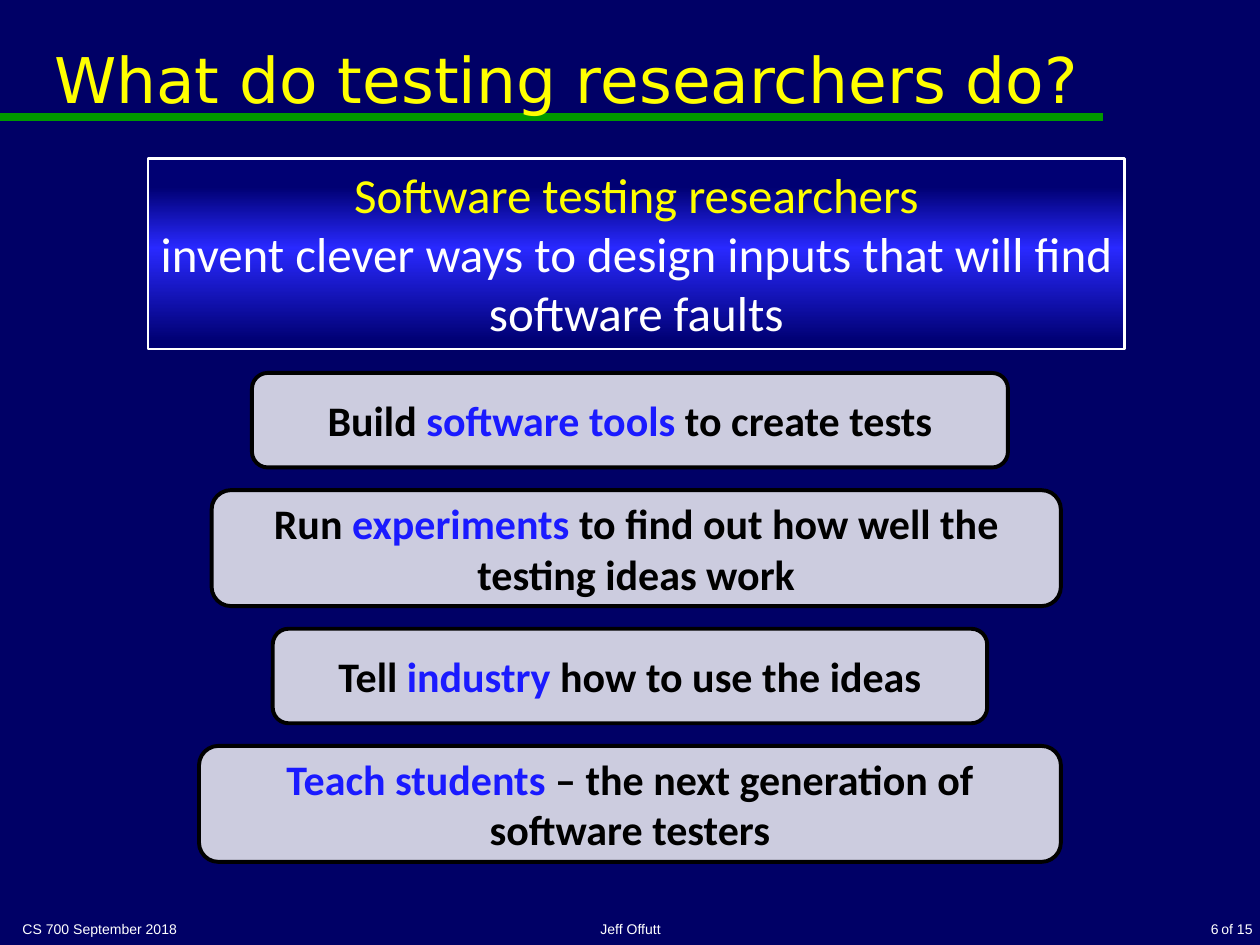
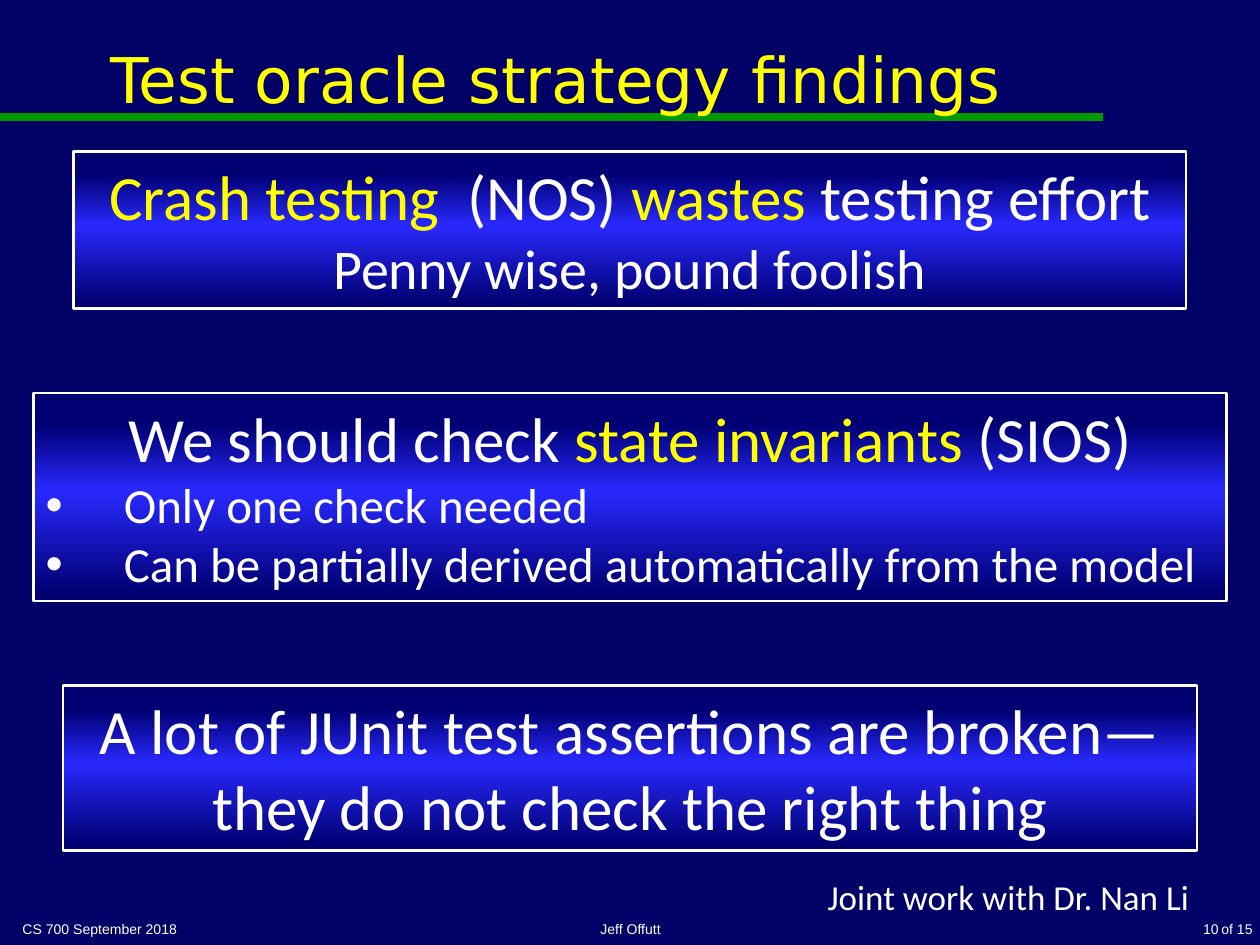
from copy import deepcopy

from lxml import etree
from pptx import Presentation
from pptx.dml.color import RGBColor
from pptx.enum.shapes import MSO_CONNECTOR as Connector, MSO_SHAPE as Shape
from pptx.enum.text import MSO_ANCHOR as Anchor, MSO_AUTO_SIZE as AutoSize, PP_ALIGN as Align
from pptx.oxml.ns import qn
from pptx.util import Inches, Pt

# ---- Shared look ----
NAVY, GREEN, YELLOW, WHITE, BLACK = "000066", "009900", "FFFF00", "FFFFFF", "000000"
BLUE, LAVENDER = "1A1AFF", "CCCCDF"
GLOW = [(0.15, "000073"), (0.47, "2929FF"), (0.96, "000073")]
TITLE_FONT, BODY_FONT, FOOTER_FONT = "DejaVu Sans", "Calibri", "Arial"
SLIDE_W, SLIDE_H = 10, 7.5
MIDDLE = SLIDE_W / 2
RULE_Y, RULE_END = 0.93, 8.75
TASK_TOP, TASK_GAP = 2.96, 0.18
BULLET_INDENT = 0.62

# ---- Content: a paragraph is (size, alignment, runs), a run is (text, colour) ----
COURSE, SPEAKER, PAGE_COUNT = "CS 700 September 2018", "Jeff Offutt", "of 15"

SLIDES = [
    {
        "title": "What do testing researchers do?", "title_width": 8.83, "page": "6",
        # Banner: centre, top, width, height, paragraphs
        "banners": [
            (5.05, 1.26, 7.75, 1.51, [
                (28, "center", [("Software testing researchers", YELLOW)]),
                (28, "center", [("invent clever ways to design inputs that will find "
                                 "software faults", WHITE)]),
            ]),
        ],
        # Task: centre, width, height, runs
        "tasks": [
            (MIDDLE, 6, 0.75, [("Build ", BLACK), ("software tools", BLUE),
                               (" to create tests", BLACK)]),
            (5.05, 6.74, 0.92, [("Run ", BLACK), ("experiments", BLUE),
                                (" to find out how well the testing ideas work", BLACK)]),
            (MIDDLE, 5.67, 0.75, [("Tell ", BLACK), ("industry", BLUE),
                                  (" how to use the ideas", BLACK)]),
            (MIDDLE, 6.84, 0.92, [("Teach students", BLUE),
                                  (" – the next generation of software testers", BLACK)]),
        ],
    },
    {
        "title": "Test oracle strategy findings", "title_width": 8.67, "page": "10",
        "banners": [
            (MIDDLE, 1.2, 8.83, 1.25, [
                (36, "center", [("Crash testing ", YELLOW), (" (NOS) ", WHITE),
                                ("wastes ", YELLOW), ("testing effort", WHITE)]),
                (32, "center", [("Penny wise, pound foolish", WHITE)]),
            ]),
            (MIDDLE, 3.12, 9.47, 1.65, [
                (36, "center", [("We should check ", WHITE), ("state invariants ", YELLOW),
                                ("(SIOS)", WHITE)]),
                (28, "bullet", [("Only one check needed", WHITE)]),
                (28, "bullet", [("Can be partially derived automatically from the model",
                                 WHITE)]),
            ]),
            (MIDDLE, 5.44, 9, 1.31, [
                (36, "center", [("A lot of JUnit test assertions are broken—"
                                 "they do not check the right thing", WHITE)]),
            ]),
        ],
        "credit": "Joint work with Dr. Nan Li",
    },
]

ALIGNMENTS = {"left": Align.LEFT, "center": Align.CENTER,
              "right": Align.RIGHT, "bullet": Align.LEFT}


def rgb(value):
    return RGBColor.from_string(value)


def box(left, top, width, height):
    return [Inches(length) for length in (left, top, width, height)]


# ---- Text ----
def add_bullet(paragraph):
    props = paragraph._p.get_or_add_pPr()
    props.set("marL", str(Inches(BULLET_INDENT)))
    props.set("indent", str(-Inches(BULLET_INDENT)))
    etree.SubElement(props, qn("a:buFont")).set("typeface", "Arial")
    etree.SubElement(props, qn("a:buChar")).set("char", "•")


def write(shape, paragraphs, font, anchor=Anchor.TOP, bold=False, wrap=True):
    frame = shape.text_frame
    frame.word_wrap = wrap
    frame.auto_size = AutoSize.NONE
    frame.vertical_anchor = anchor
    for index, (size, align, runs) in enumerate(paragraphs):
        paragraph = frame.add_paragraph() if index else frame.paragraphs[0]
        paragraph.alignment = ALIGNMENTS[align]
        if align == "bullet":
            add_bullet(paragraph)
        for text, colour in runs:
            run = paragraph.add_run()
            run.text = text
            run.font.name, run.font.size, run.font.bold = font, Pt(size), bold
            run.font.color.rgb = rgb(colour)


def add_label(slide, place, text, size, align, font, **options):
    label = slide.shapes.add_textbox(*box(*place))
    write(label, [(size, align, [(text, WHITE)])], font, **options)


# ---- Parts ----
def add_panel(slide, kind, centre, top, width, height, outline, weight):
    panel = slide.shapes.add_shape(kind, *box(centre - width / 2, top, width, height))
    panel.shadow.inherit = False
    panel.line.color.rgb = rgb(outline)
    panel.line.width = Pt(weight)
    return panel


def fill_glow(fill):
    fill.gradient()
    fill.gradient_angle = 270
    stop_list = fill._fill._gradFill.find(qn("a:gsLst"))
    stop_list.append(deepcopy(stop_list[-1]))
    for stop, (position, colour) in zip(fill.gradient_stops, GLOW):
        stop.position = position
        stop.color.rgb = rgb(colour)


def add_banner(slide, centre, top, width, height, paragraphs):
    banner = add_panel(slide, Shape.RECTANGLE, centre, top, width, height, WHITE, 1.5)
    fill_glow(banner.fill)
    write(banner, paragraphs, BODY_FONT)


def add_tasks(slide, tasks):
    top = TASK_TOP
    for centre, width, height, runs in tasks:
        task = add_panel(slide, Shape.ROUNDED_RECTANGLE, centre, top, width, height, BLACK, 2.25)
        task.fill.solid()
        task.fill.fore_color.rgb = rgb(LAVENDER)
        write(task, [(24, "center", runs)], BODY_FONT, Anchor.MIDDLE, bold=True)
        top += height + TASK_GAP


def add_frame(slide, title, title_width, page):
    # Green rule under the title
    rule = slide.shapes.add_connector(Connector.STRAIGHT, Inches(0), Inches(RULE_Y),
                                      Inches(RULE_END), Inches(RULE_Y))
    rule.line.color.rgb = rgb(GREEN)
    rule.line.width = Pt(4.5)
    etree.SubElement(rule._element.spPr, qn("a:effectLst"))

    # Title, drawn above the rule
    heading = slide.shapes.title
    heading.left, heading.top, heading.width, heading.height = box(0.08, 0, title_width, 1.25)
    write(heading, [(36, "center", [(title, YELLOW)])], TITLE_FONT, Anchor.MIDDLE)
    rule._element.addnext(heading._element)

    # Footer
    for place, text, align in [((0.08, 7.16, 2.33, 0.33), COURSE, "left"),
                               ((3.42, 7.16, 3.17, 0.33), SPEAKER, "center"),
                               ((7.58, 7.16, 2.19, 0.33), page, "right")]:
        add_label(slide, place, text, 8, align, FOOTER_FONT, anchor=Anchor.BOTTOM)
    add_label(slide, (9.59, 7.26, 0.45, 0.24), PAGE_COUNT, 8, "right", FOOTER_FONT, wrap=False)


def main():
    deck = Presentation()
    deck.slide_width, deck.slide_height = Inches(SLIDE_W), Inches(SLIDE_H)
    backdrop = deck.slide_master.background.fill
    backdrop.solid()
    backdrop.fore_color.rgb = rgb(NAVY)
    title_only = deck.slide_layouts.get_by_name("Title Only")

    for content in SLIDES:
        slide = deck.slides.add_slide(title_only)
        add_frame(slide, content["title"], content["title_width"], content["page"])
        for banner in content["banners"]:
            add_banner(slide, *banner)
        add_tasks(slide, content.get("tasks", []))
        if "credit" in content:
            add_label(slide, (6.47, 6.9, 3.2, 0.44), content["credit"], 20, "left",
                      BODY_FONT, wrap=False)
    deck.save("out.pptx")


if __name__ == "__main__":
    main()
